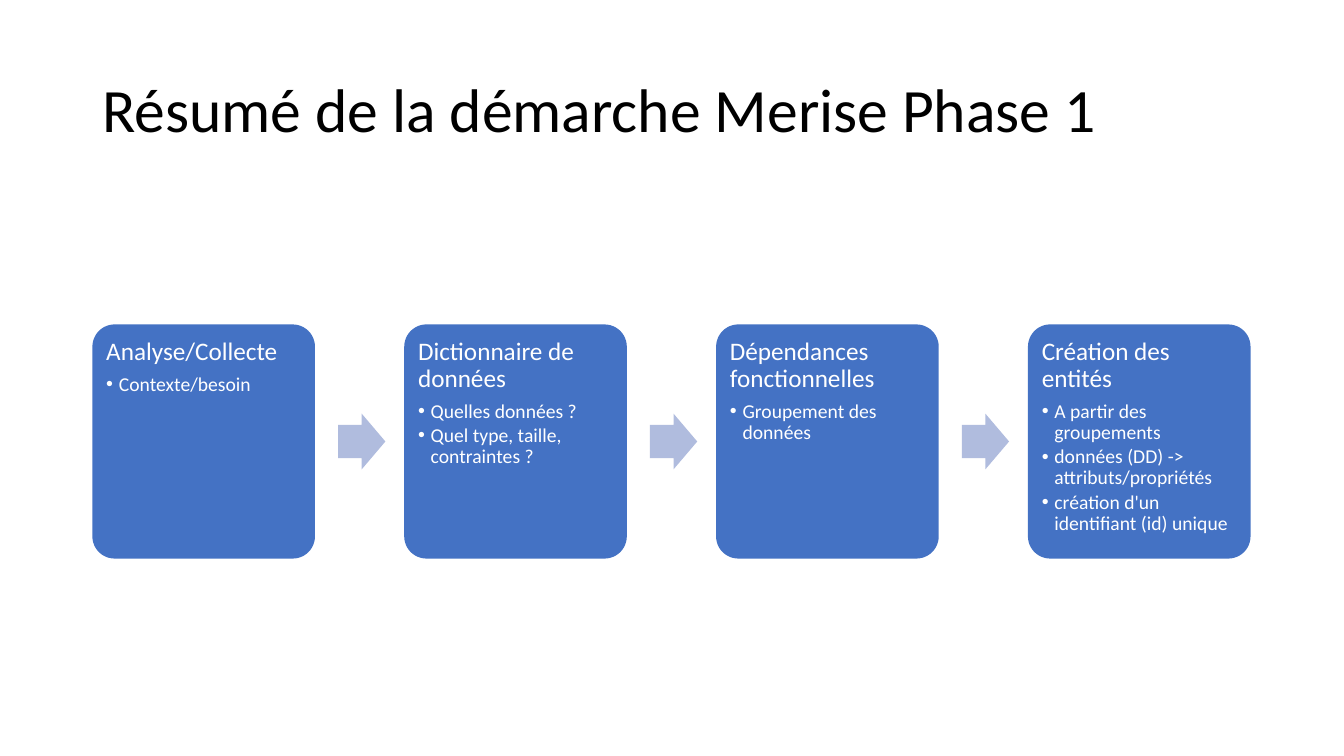
from lxml.etree import SubElement
from pptx import Presentation
from pptx.dml.color import RGBColor
from pptx.enum.shapes import MSO_SHAPE
from pptx.enum.text import MSO_ANCHOR, PP_ALIGN
from pptx.oxml.ns import qn
from pptx.util import Emu, Pt

BLACK = RGBColor(0x00, 0x00, 0x00)
WHITE = RGBColor(0xFF, 0xFF, 0xFF)
BLUE = RGBColor(0x44, 0x72, 0xC4)
PALE_BLUE = RGBColor(0xB0, 0xBC, 0xDE)

STEPS = [
    ("Analyse/Collecte", ["Contexte/besoin"]),
    ("Dictionnaire de données", ["Quelles données ?", "Quel type, taille, contraintes ?"]),
    ("Dépendances fonctionnelles", ["Groupement des données"]),
    ("Création des entités", [
        "A partir des groupements",
        "données (DD) -> attributs/propriétés",
        "création d'un identifiant (id) unique",
    ]),
]
FIRST_LEFT = 88
STEP_PITCH = 297
ARROW_OFFSET = 234


def px(length):
    return Emu(length * 9525)


class ProcessSlide:
    font = "Calibri"
    line_spacing = 0.9

    def __init__(self, slide):
        self.slide = slide

    def paragraph(self, paragraph, text, size, color, after=0):
        paragraph.alignment = PP_ALIGN.LEFT
        paragraph.line_spacing = self.line_spacing
        paragraph.space_after = Pt(after)
        run = paragraph.add_run()
        run.text = text
        run.font.name = self.font
        run.font.size = Pt(size)
        run.font.color.rgb = color

    def bullet(self, paragraph, text):
        self.paragraph(paragraph, text, 14, WHITE, after=2.1)
        paragraph.level = 1
        properties = paragraph._p.get_or_add_pPr()
        properties.set("marL", str(px(12)))
        properties.set("indent", str(-px(12)))
        SubElement(properties, qn("a:buFont"), typeface="Arial")
        SubElement(properties, qn("a:buChar"), char="•")

    def title(self, text, left, top, width, height):
        heading = self.slide.shapes.add_textbox(px(left), px(top), px(width), px(height))
        frame = heading.text_frame
        frame.word_wrap = True
        frame.vertical_anchor = MSO_ANCHOR.MIDDLE
        self.paragraph(frame.paragraphs[0], text, 44, BLACK)

    def block(self, kind, adjustments, color, left, top, width, height):
        block = self.slide.shapes.add_shape(kind, px(left), px(top), px(width), px(height))
        for index, value in enumerate(adjustments):
            block.adjustments[index] = value
        block.shadow.inherit = False
        block.fill.solid()
        block.fill.fore_color.rgb = color
        block.line.fill.background()
        return block

    def card(self, heading, details, left):
        card = self.block(MSO_SHAPE.ROUNDED_RECTANGLE, [0.1], BLUE, left, 309, 212, 223)
        frame = card.text_frame
        frame.word_wrap = True
        frame.vertical_anchor = MSO_ANCHOR.TOP
        frame.margin_left = frame.margin_right = px(7)
        frame.margin_top = frame.margin_bottom = px(7)
        self.paragraph(frame.paragraphs[0], heading, 18, WHITE, after=6.3)
        for detail in details:
            self.bullet(frame.add_paragraph(), detail)

    def arrow(self, left):
        self.block(MSO_SHAPE.RIGHT_ARROW, [0.6, 0.5], PALE_BLUE, left, 394, 45, 53)


def main():
    deck = Presentation()
    deck.slide_width = px(1280)
    deck.slide_height = px(720)
    process = ProcessSlide(deck.slides.add_slide(deck.slide_layouts[6]))
    process.title("Résumé de la démarche Merise Phase 1", 88, 38, 1104, 139)
    for index, (heading, details) in enumerate(STEPS):
        left = FIRST_LEFT + index * STEP_PITCH
        process.card(heading, details, left)
        if index < len(STEPS) - 1:
            process.arrow(left + ARROW_OFFSET)
    deck.save("out.pptx")


if __name__ == "__main__":
    main()
